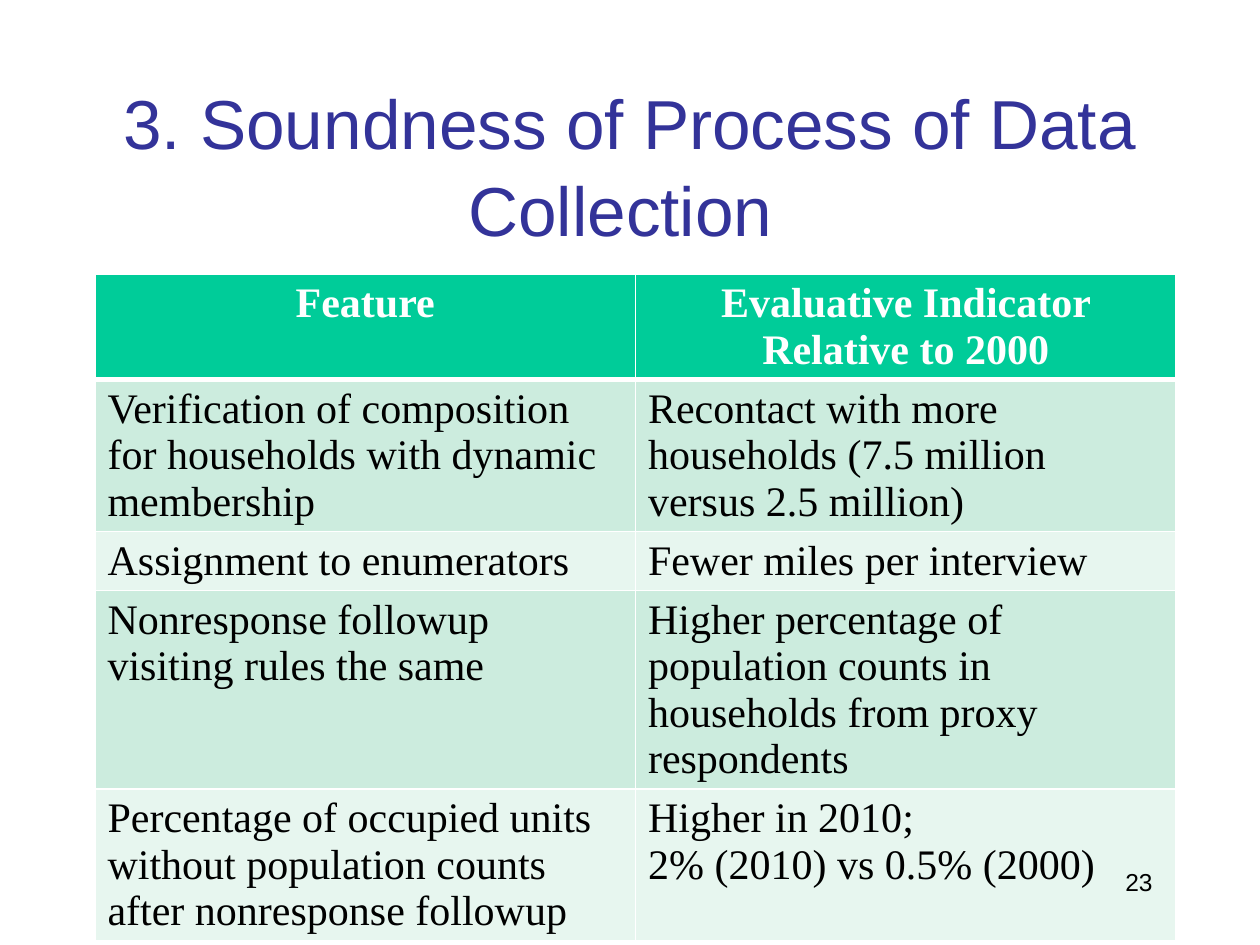
from lxml import etree
from pptx import Presentation
from pptx.dml.color import RGBColor
from pptx.enum.text import MSO_ANCHOR, MSO_AUTO_SIZE, PP_ALIGN
from pptx.oxml.ns import qn
from pptx.util import Pt

EMU_PER_PX = 914400 // 126
CENTER, LEFT, RIGHT = PP_ALIGN.CENTER, PP_ALIGN.LEFT, PP_ALIGN.RIGHT
TOP, MIDDLE = MSO_ANCHOR.TOP, MSO_ANCHOR.MIDDLE
NO_AUTOFIT = MSO_AUTO_SIZE.NONE
COLORS = {
    "title": "333399", "text": "000000", "white": "FFFFFF",
    "header": "00CC99", "band_dark": "CCECDE", "band_light": "E7F6EF",
}
ROWS = [
    ("Feature", "Evaluative Indicator Relative to 2000"),
    ("Verification of composition for households with dynamic membership",
     "Recontact with more households (7.5 million versus 2.5 million)"),
    ("Assignment to enumerators", "Fewer miles per interview"),
    ("Nonresponse followup visiting rules the same",
     "Higher percentage of population counts in households from proxy respondents"),
    ("Percentage of occupied units without population counts after nonresponse followup",
     "Higher in 2010;\n2% (2010) vs 0.5% (2000)"),
]
ROW_HEIGHTS = [52, 54, 54, 52, 52]


def px(length):
    """Turn whole pixels into EMU."""
    return length * EMU_PER_PX


def color(name):
    """Look up a named colour."""
    return RGBColor.from_string(COLORS[name])


def write(text_frame, text, font_name, size, color_name, alignment, bold=False):
    """Write one formatted paragraph for each line of text."""
    text_frame.word_wrap = True
    for index, line in enumerate(text.split("\n")):
        paragraph = text_frame.add_paragraph() if index else text_frame.paragraphs[0]
        paragraph.alignment = alignment
        run = paragraph.add_run()
        run.text = line
        run.font.name = font_name
        run.font.size = Pt(size)
        run.font.bold = bold
        run.font.color.rgb = color(color_name)


def set_borders(cell, bottom_width):
    """Draw white borders around a cell."""
    properties = cell._tc.get_or_add_tcPr()
    widths = {"a:lnL": 1, "a:lnR": 1, "a:lnT": 1, "a:lnB": bottom_width}
    for position, (tag, width) in enumerate(widths.items()):
        line = etree.Element(qn(tag), w=str(Pt(width)))
        fill = etree.SubElement(line, qn("a:solidFill"))
        etree.SubElement(fill, qn("a:srgbClr"), val=COLORS["white"])
        properties.insert(position, line)


def add_title(slide, left, top, width, height):
    """Place the slide title."""
    title = slide.shapes.title
    title.left, title.top, title.width, title.height = map(px, (left, top, width, height))
    text_frame = title.text_frame
    text_frame.auto_size = NO_AUTOFIT
    text_frame.vertical_anchor = MIDDLE
    write(text_frame, "3. Soundness of Process of Data Collection ",
          "Arial", 39.6, "title", CENTER)
    text_frame.paragraphs[0].line_spacing = 1.05


def add_indicator_table(slide, left, top, width, height):
    """Place the table of features and indicators."""
    frame = slide.shapes.add_table(
        len(ROWS), len(ROWS[0]), *map(px, (left, top, width, height)))
    table = frame.table
    for row_index, texts in enumerate(ROWS):
        table.rows[row_index].height = px(ROW_HEIGHTS[row_index])
        is_header = row_index == 0
        band = "band_dark" if row_index % 2 else "band_light"
        for column_index, text in enumerate(texts):
            cell = table.cell(row_index, column_index)
            cell.fill.solid()
            cell.fill.fore_color.rgb = color("header" if is_header else band)
            write(cell.text_frame, text, "Times New Roman", 24,
                  "white" if is_header else "text",
                  CENTER if is_header else LEFT, is_header)
            set_borders(cell, 3 if is_header else 1)
    frame.height = px(height)


def add_page_number(slide, left, top, width, height):
    """Place the page number."""
    box = slide.shapes.add_textbox(*map(px, (left, top, width, height)))
    box.text_frame.vertical_anchor = TOP
    write(box.text_frame, "23", "Arial", 14, "text", RIGHT)


def main():
    """Build and save the slide."""
    presentation = Presentation()
    presentation.slide_width, presentation.slide_height = px(1260), px(945)
    slide = presentation.slides.add_slide(presentation.slide_layouts[5])
    add_title(slide, 94, 84, 1072, 158)
    add_indicator_table(slide, 95, 274, 1081, 520)
    add_page_number(slide, 903, 861, 262, 63)
    presentation.save("out.pptx")


if __name__ == "__main__":
    main()
